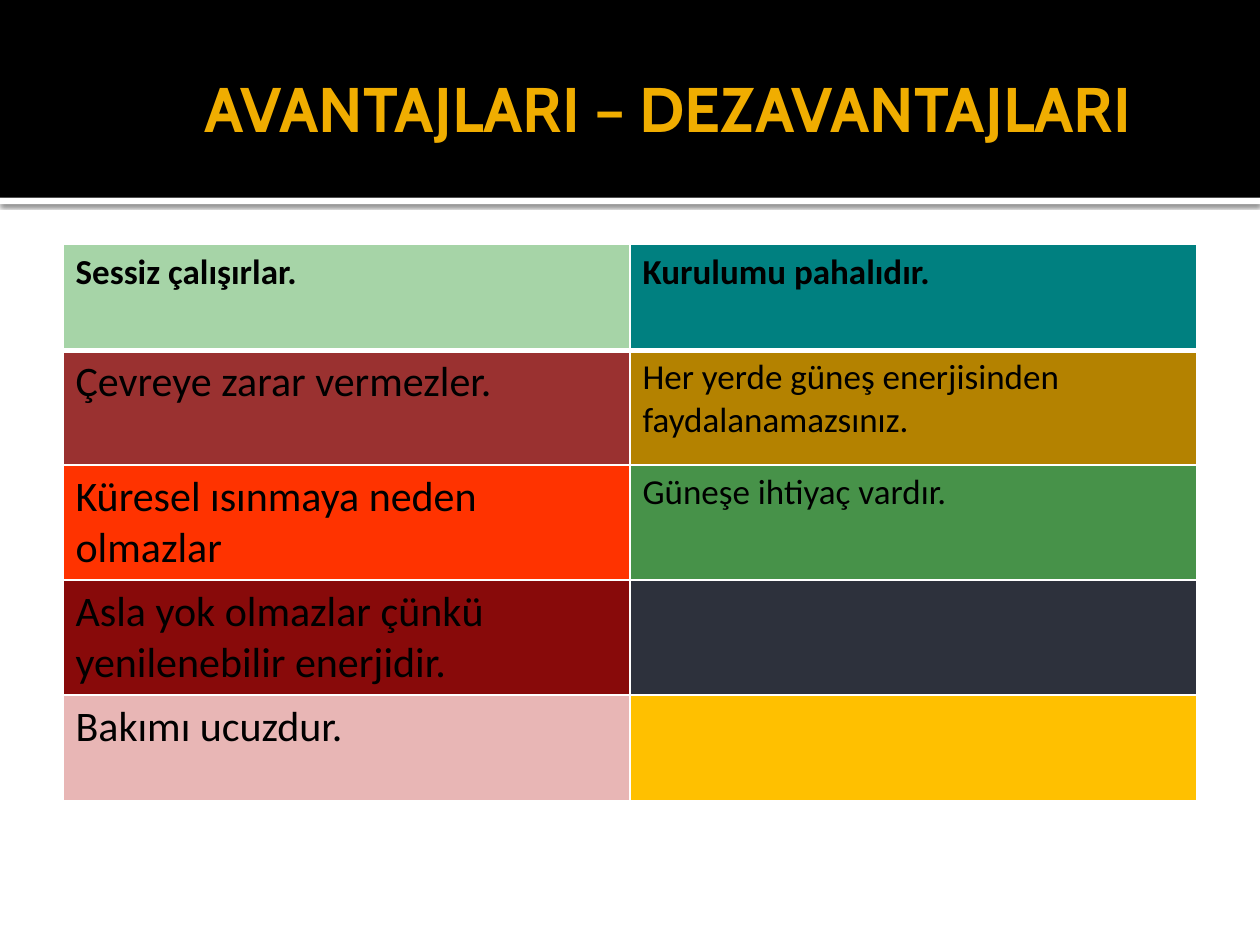
from dataclasses import dataclass

from lxml.etree import SubElement
from pptx import Presentation
from pptx.dml.color import RGBColor
from pptx.enum.shapes import MSO_SHAPE
from pptx.enum.text import MSO_ANCHOR, PP_ALIGN
from pptx.oxml import parse_xml
from pptx.oxml.ns import nsdecls, qn
from pptx.util import Inches, Pt


@dataclass(frozen=True)
class Theme:
    white: str = "FFFFFF"
    black: str = "000000"
    gold: str = "F0AD00"
    title_font: str = "Cabin"
    body_font: str = "Calibri"
    title_size: int = 36
    large: int = 24
    small: int = 20
    thin: int = 1
    thick: int = 3


THEME = Theme()

# Each row: height, then text and fill of the advantage and the disadvantage.
ROWS = [
    (0.84, ("Sessiz çalışırlar.", "A6D4A7"), ("Kurulumu pahalıdır.", "008080")),
    (0.91, ("Çevreye zarar vermezler.", "9A3130"),
     ("Her yerde güneş enerjisinden faydalanamazsınız.", "B48200")),
    (0.91, ("Küresel ısınmaya neden olmazlar", "FF3300"),
     ("Güneşe ihtiyaç vardır.", "479249")),
    (0.91, ("Asla yok olmazlar çünkü yenilenebilir enerjidir.", "880A0A"),
     ("", "2D313C")),
    (0.84, ("Bakımı ucuzdur.", "E8B6B5"), ("", "FFC000")),
]


class SlideBuilder:
    def __init__(self, slide, theme):
        self.slide = slide
        self.theme = theme

    def format_font(self, p, name, size, color, bold):
        for r in p.runs:
            r.font.name = name
            r.font.size = Pt(size)
            r.font.bold = bold
            r.font.color.rgb = RGBColor.from_string(color)

    def band(self, top, height, color, shadow=False):
        """Draw a full-width bar, optionally with a soft shadow below it."""
        sp = self.slide.shapes.add_shape(
            MSO_SHAPE.RECTANGLE, 0, Inches(top), Inches(10), Inches(height))
        sp.fill.solid()
        sp.fill.fore_color.rgb = RGBColor.from_string(color)
        sp.line.fill.background()
        sp.shadow.inherit = False
        if shadow:
            effects = sp._element.spPr.find(qn("a:effectLst"))
            outer = SubElement(effects, qn("a:outerShdw"), blurRad=str(Pt(2.5)),
                               dist=str(Pt(0.8)), dir="5400000")
            clr = SubElement(outer, qn("a:srgbClr"), val=self.theme.black)
            SubElement(clr, qn("a:alpha"), val="60000")

    def title(self, text):
        sp = self.slide.shapes.title
        sp.left, sp.top = Inches(0.5), Inches(0.17)
        sp.width, sp.height = Inches(9), Inches(1.37)
        tf = sp.text_frame
        tf.text = text
        tf.word_wrap = True
        tf.vertical_anchor = MSO_ANCHOR.MIDDLE
        tf.margin_left, tf.margin_right = Inches(0.65), Inches(0.05)
        tf.margin_top = tf.margin_bottom = Inches(0.05)
        p = tf.paragraphs[0]
        p.alignment = PP_ALIGN.CENTER
        self.format_font(p, self.theme.title_font, self.theme.title_size,
                         self.theme.gold, True)
        # Bring the title in front of the bands.
        self.slide.shapes._spTree.append(sp._element)

    def cell_borders(self, cell, widths):
        tc_pr = cell._tc.get_or_add_tcPr()
        for i, (side, width) in enumerate(widths.items()):
            tc_pr.insert(i, parse_xml(
                f'<a:ln{side} {nsdecls("a")} w="{Pt(width)}"><a:solidFill>'
                f'<a:srgbClr val="{self.theme.white}"/></a:solidFill></a:ln{side}>'))

    def table(self, left, top, width, rows):
        t = self.theme
        height = sum(row[0] for row in rows)
        table = self.slide.shapes.add_table(
            len(rows), 2, Inches(left), Inches(top),
            Inches(width), Inches(height)).table
        for i, (row_height, *cells) in enumerate(rows):
            table.rows[i].height = Inches(row_height)
            for j, (text, fill) in enumerate(cells):
                cell = table.cell(i, j)
                cell.text = text
                cell.fill.solid()
                cell.fill.fore_color.rgb = RGBColor.from_string(fill)
                size = t.large if i > 0 and j == 0 else t.small
                self.format_font(cell.text_frame.paragraphs[0], t.body_font,
                                 size, t.black, i == 0)
                self.cell_borders(cell, {
                    "L": t.thin, "R": t.thin,
                    "T": t.thick if i == 1 else t.thin,
                    "B": t.thick if i == 0 else t.thin})


def main():
    prs = Presentation()
    prs.slide_width, prs.slide_height = Inches(10), Inches(7.5)
    s = SlideBuilder(prs.slides.add_slide(prs.slide_layouts[5]), THEME)
    s.band(1.57, 0.05, THEME.white, shadow=True)
    s.band(0, 1.57, THEME.black)
    s.title("AVANTAJLARI – DEZAVANTAJLARI")
    s.table(0.5, 1.94, 9, ROWS)
    prs.save("out.pptx")


if __name__ == "__main__":
    main()
